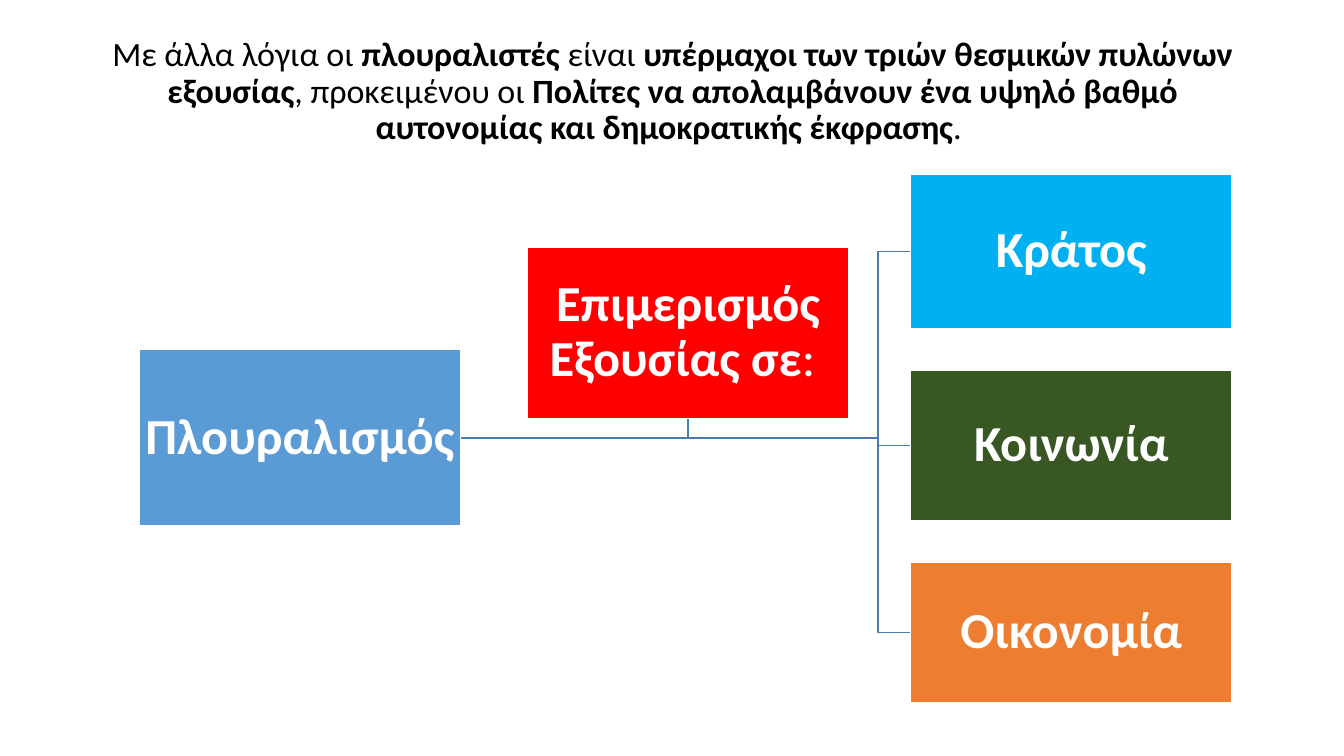
from collections import namedtuple

from pptx import Presentation
from pptx.dml.color import RGBColor
from pptx.enum.shapes import MSO_SHAPE as Shape
from pptx.enum.text import MSO_ANCHOR as Anchor, MSO_AUTO_SIZE as AutoSize, PP_ALIGN as Align
from pptx.util import Inches, Pt

WHITE = RGBColor(0xFF, 0xFF, 0xFF)
BLACK = RGBColor(0x00, 0x00, 0x00)
LINK = RGBColor(0x49, 0x7C, 0xAB)
BLUE = RGBColor(0x5B, 0x9B, 0xD5)
RED = RGBColor(0xFF, 0x00, 0x00)
SKY = RGBColor(0x00, 0xB0, 0xF0)
GREEN = RGBColor(0x38, 0x57, 0x23)
ORANGE = RGBColor(0xED, 0x7D, 0x31)

FONT = "Calibri"
NODE_WIDTH = 3.19
BRANCH_GAP = 0.41
ELBOW = 0.32  # distance from the trunk to the branches

Box = namedtuple("Box", "left top width height")

# Text pieces are (wording, bold)
TITLE = [
    ("Με άλλα λόγια οι ", False),
    ("πλουραλιστές", True),
    (" είναι ", False),
    ("υπέρμαχοι των τριών θεσμικών πυλώνων εξουσίας", True),
    (", προκειμένου οι ", False),
    ("Πολίτες να απολαμβάνουν ένα υψηλό βαθμό αυτονομίας και δημοκρατικής έκφρασης", True),
    (". ", False),
]
ROOT = [("Πλουραλισμός", True)]
ASSISTANT = [("Επιμερισμός Εξουσίας σε", True), (": ", False)]
BRANCHES = [("Κράτος", SKY, 1.53), ("Κοινωνία", GREEN, 1.5), ("Οικονομία", ORANGE, 1.39)]


def write_text(frame, pieces, size, color):
    frame.word_wrap = True
    frame.auto_size = AutoSize.NONE
    frame.vertical_anchor = Anchor.MIDDLE
    para = frame.paragraphs[0]
    para.alignment = Align.CENTER
    para.line_spacing = 0.9
    para.font.name = FONT
    para.font.size = Pt(size)
    para.font.color.rgb = color
    for wording, bold in pieces:
        span = para.add_run()
        span.text = wording
        span.font.bold = bold


def add_title(page, box):
    title = page.shapes.title
    title.left, title.top, title.width, title.height = map(Inches, box)
    write_text(title.text_frame, TITLE, 24.3, BLACK)


def add_node(page, box, pieces, fill):
    node = page.shapes.add_shape(Shape.RECTANGLE, *map(Inches, box))
    node.shadow.inherit = False
    node.fill.solid()
    node.fill.fore_color.rgb = fill
    node.line.color.rgb = WHITE
    node.line.width = Pt(1)
    frame = node.text_frame
    frame.margin_left = frame.margin_right = Inches(0.03)
    frame.margin_top = frame.margin_bottom = Inches(0.03)
    write_text(frame, pieces, 36, WHITE)


def add_route(page, points):
    start, *rest = [(Inches(x), Inches(y)) for x, y in points]
    builder = page.shapes.build_freeform(*start)
    builder.add_line_segments(rest, close=False)
    route = builder.convert_to_shape()
    route.shadow.inherit = False
    route.fill.background()
    route.line.color.rgb = LINK
    route.line.width = Pt(1)


def add_hierarchy(page, box):
    # Places of the boxes
    root = Box(box.left, box.top + 1.74, NODE_WIDTH, 1.75)
    assistant = Box(box.left + 3.85, box.top + 0.72, NODE_WIDTH, 1.7)
    branch_left = box.left + box.width - NODE_WIDTH
    branches, top = [], box.top
    for name, fill, height in BRANCHES:
        branches.append((Box(branch_left, top, NODE_WIDTH, height), name, fill))
        top += height + BRANCH_GAP

    # Routes from the root
    start_x = root.left + root.width
    trunk_y = root.top + root.height / 2
    middle = assistant.left + assistant.width / 2
    add_route(page, [(start_x, trunk_y), (middle, trunk_y),
                     (middle, assistant.top + assistant.height)])
    turn = branch_left - ELBOW
    for branch, _, _ in branches:
        end_y = branch.top + branch.height / 2
        add_route(page, [(start_x, trunk_y), (turn, trunk_y),
                         (turn, end_y), (branch_left, end_y)])

    # Boxes over the routes
    add_node(page, root, ROOT, BLUE)
    for branch, name, fill in branches:
        add_node(page, branch, [(name, True)], fill)
    add_node(page, assistant, ASSISTANT, RED)


def main():
    deck = Presentation()
    deck.slide_width, deck.slide_height = Inches(13.33), Inches(7.5)
    page = deck.slides.add_slide(deck.slide_layouts.get_by_name("Title Only"))
    add_title(page, Box(0.92, 0.4, 11.5, 1.03))
    add_hierarchy(page, Box(1.38, 1.73, 10.84, 5.22))
    deck.save("out.pptx")


if __name__ == "__main__":
    main()
